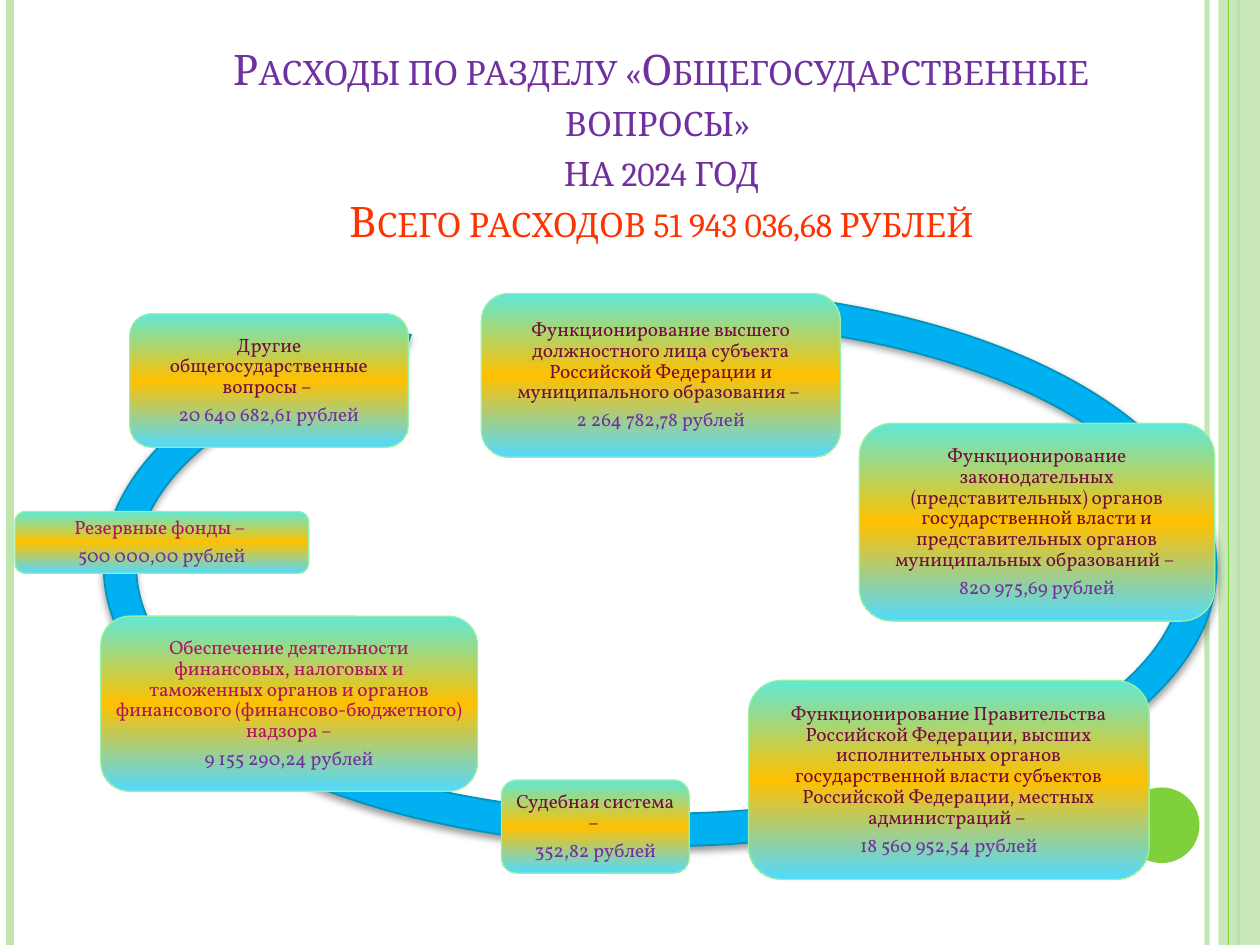
from copy import deepcopy
from dataclasses import dataclass

from pptx import Presentation
from pptx.dml.color import RGBColor
from pptx.enum.shapes import MSO_CONNECTOR, MSO_SHAPE
from pptx.enum.text import MSO_ANCHOR, PP_ALIGN
from pptx.oxml import parse_xml
from pptx.oxml.ns import nsdecls, qn
from pptx.util import Inches, Pt

STRAIGHT = MSO_CONNECTOR.STRAIGHT
RECT, OVAL = MSO_SHAPE.RECTANGLE, MSO_SHAPE.OVAL
ROUNDED, RING = MSO_SHAPE.ROUNDED_RECTANGLE, MSO_SHAPE.CIRCULAR_ARROW
MIDDLE, TOP, CENTER = MSO_ANCHOR.MIDDLE, MSO_ANCHOR.TOP, PP_ALIGN.CENTER

COLORS = {
    "pale": "C0E5AF", "green": "7FD13B", "ring": "00B0F0", "ring_edge": "0094BC",
    "teal": "5FE8D6", "gold": "FFC000", "sky": "51DAFF", "card_edge": "98F2A3",
    "wine": "750B3D", "berry": "B0105C", "violet": "7030A0", "red": "FF3300",
}
GRADIENT = [(0, "teal"), (0.5, "gold"), (1, "sky")]
RING_ADJUSTMENTS = [0.055, 3.307, 130.514, 178.445, 0.058]


@dataclass
class Stripe:
    x: float
    color: str
    width: float
    alpha: int = 100


@dataclass
class Card:
    left: float
    top: float
    width: float
    height: float
    label: str
    amount: str
    color: str = "wine"


BACK_STRIPES = [Stripe(9.58, "pale", 3, 93), Stripe(0.08, "pale", 4.5),
                Stripe(9.83, "green", 1.5)]
FRONT_STRIPE = Stripe(9.75, "green", 0.75)

CARDS = [
    Card(3.82, 2.33, 2.85, 1.3, "Функционирование высшего должностного лица субъекта "
         "Российской Федерации и муниципального образования – ", "2 264 782,78"),
    Card(6.82, 3.36, 2.82, 1.57, "Функционирование законодательных (представительных) "
         "органов государственной власти и представительных органов "
         "муниципальных образований – ", "820 975,69"),
    Card(5.94, 5.4, 3.18, 1.58, "Функционирование Правительства Российской Федерации, "
         "высших исполнительных органов государственной власти субъектов "
         "Российской Федерации, местных администраций – ", "18 560 952,54"),
    Card(3.98, 6.19, 1.49, 0.74, "Судебная система – ", "352,82"),
    Card(0.8, 4.89, 2.99, 1.39, "Обеспечение деятельности финансовых, налоговых и "
         "таможенных органов и органов финансового (финансово-бюджетного) надзора –",
         "9 155 290,24", "berry"),
    Card(0.12, 4.06, 2.33, 0.49, "Резервные фонды – ", "500 000,00", "berry"),
    Card(1.03, 2.49, 2.21, 1.06, "Другие общегосударственные вопросы – ",
         "20 640 682,61"),
]
TITLE = [("Расходы по разделу «Общегосударственные вопросы» ", "violet"),
         ("на 2024 год", "violet"),
         ("Всего расходов 51 943 036,68 рублей", "red")]


def rgb(name: str) -> RGBColor:
    return RGBColor.from_string(COLORS[name])


def set_alpha(parent, percent: int) -> None:
    """Make the first solid colour found below parent translucent."""
    color = parent.find(".//" + qn("a:srgbClr"))
    color.append(parse_xml(f'<a:alpha {nsdecls("a")} val="{percent * 1000}"/>'))


def add_stripe(slide, stripe: Stripe) -> None:
    line = slide.shapes.add_connector(STRAIGHT, Inches(stripe.x), 0,
                                      Inches(stripe.x), Inches(7.5))
    line.line.color.rgb = rgb(stripe.color)
    line.line.width = Pt(stripe.width)
    spPr = line._element.spPr
    if stripe.alpha < 100:
        set_alpha(spPr, stripe.alpha)
    spPr.append(parse_xml(f'<a:effectLst {nsdecls("a")}/>'))


def add_plain(slide, kind, left: float, top: float, width: float, height: float,
              color: str):
    s = slide.shapes.add_shape(kind, Inches(left), Inches(top),
                               Inches(width), Inches(height))
    s.shadow.inherit = False
    s.fill.solid()
    s.fill.fore_color.rgb = rgb(color)
    s.line.fill.background()
    return s


def add_ring(slide) -> None:
    s = add_plain(slide, RING, 0.68, 2.15, 9.12, 4.71, "ring")
    for i, value in enumerate(RING_ADJUSTMENTS):
        s.adjustments[i] = value
    s.line.color.rgb = rgb("ring_edge")
    s.line.width = Pt(1)
    s._element.spPr.find(qn("a:effectLst")).append(parse_xml(
        f'<a:outerShdw {nsdecls("a")} blurRad="{Pt(4)}" dist="{Pt(2)}" dir="5400000" '
        'rotWithShape="0"><a:srgbClr val="000000"><a:alpha val="40000"/></a:srgbClr>'
        '</a:outerShdw>'))


def fill_gradient(s) -> None:
    """Fill top to bottom with the three gradient colours."""
    s.fill.gradient()
    s.fill.gradient_angle = 270
    stop_list = s._element.spPr.find(".//" + qn("a:gsLst"))
    stop_list.append(deepcopy(stop_list[-1]))
    for stop, (position, color) in zip(s.fill.gradient_stops, GRADIENT):
        stop.position = position
        stop.color.rgb = rgb(color)


def style_paragraph(p, font: str, size: float, color: str) -> None:
    p.alignment = CENTER
    for r in p.runs:
        r.font.name = font
        r.font.size = Pt(size)
        r.font.color.rgb = rgb(color)


def add_card(slide, card: Card) -> None:
    s = add_plain(slide, ROUNDED, card.left, card.top, card.width, card.height, "gold")
    fill_gradient(s)
    s.line.color.rgb = rgb("card_edge")
    s.line.width = Pt(0.75)
    tf = s.text_frame
    tf.word_wrap = True
    tf.vertical_anchor = MIDDLE
    tf.margin_left = tf.margin_right = tf.margin_top = tf.margin_bottom = Inches(0.05)
    tf.text = f"{card.label}\n{card.amount} рублей"
    for p, color in zip(tf.paragraphs, (card.color, "violet")):
        style_paragraph(p, "Vollkorn", 11, color)
        p.line_spacing = 0.9
        p.space_after = Pt(4)


def add_title(slide) -> None:
    box = slide.shapes.add_textbox(Inches(1), Inches(0.3), Inches(8.5), Inches(1.7))
    tf = box.text_frame
    tf.word_wrap = True
    tf.vertical_anchor = TOP
    tf.text = "\n".join(text for text, _ in TITLE)
    for p, (_, color) in zip(tf.paragraphs, TITLE):
        style_paragraph(p, "Cambria", 24, color)
        for r in p.runs:
            r.font._element.set("cap", "small")


def main() -> None:
    prs = Presentation()
    prs.slide_width, prs.slide_height = Inches(10), Inches(7.5)
    slide = prs.slides.add_slide(prs.slide_layouts[6])
    for stripe in BACK_STRIPES:
        add_stripe(slide, stripe)
    band = add_plain(slide, RECT, 9.67, 0, 0.33, 7.5, "pale")
    set_alpha(band._element.spPr, 87)
    add_stripe(slide, FRONT_STRIPE)
    add_plain(slide, OVAL, 8.92, 6.25, 0.6, 0.6, "green")
    add_ring(slide)
    for card in CARDS:
        add_card(slide, card)
    add_title(slide)
    prs.save("out.pptx")


if __name__ == "__main__":
    main()
